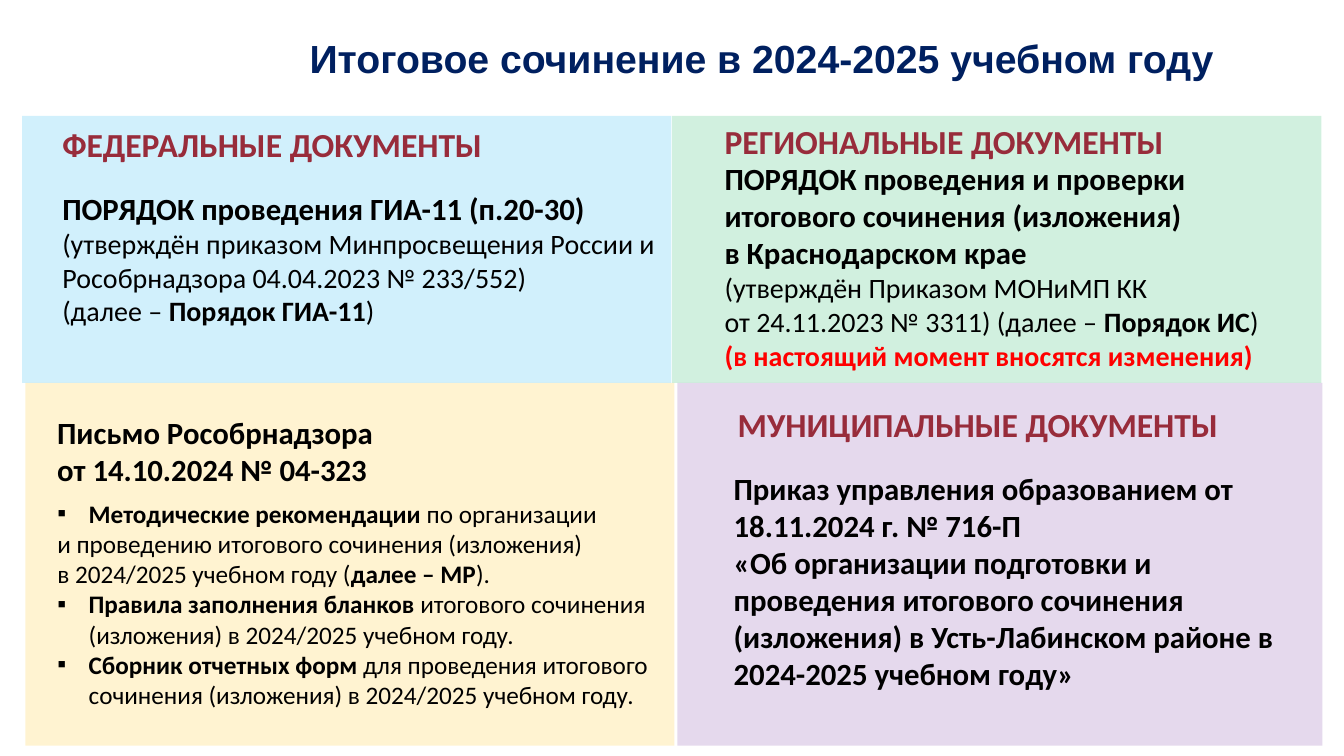
from lxml import etree
from pptx import Presentation
from pptx import util as u
from pptx.dml.color import RGBColor
from pptx.enum import shapes, text
from pptx.oxml.ns import qn

BLACK, WINE, RED, NAVY = "000000", "982C3B", "FF0000", "002060"


def paint(item, color):
    item.rgb = RGBColor.from_string(color)


class Deck:
    face = "Calibri"

    def __init__(self):
        self.show = Presentation()
        self.show.slide_width = u.Cm(33.87)
        self.show.slide_height = u.Cm(19.05)
        self.slide = self.show.slides.add_slide(self.show.slide_layouts[1])
        self.head, self.body = self.slide.placeholders

    def place(self, shape, box):
        shape.left, shape.top, shape.width, shape.height = map(u.Cm, box)
        shape.text_frame.auto_size = text.MSO_AUTO_SIZE.NONE
        return shape.text_frame

    def panel(self, box, color):
        shape = self.slide.shapes.add_shape(
            shapes.MSO_SHAPE.RECTANGLE, *map(u.Cm, box))
        shape.shadow.inherit = False
        shape.fill.solid()
        paint(shape.fill.fore_color, color)
        shade = shape.element.spPr.find(".//" + qn("a:srgbClr"))
        etree.SubElement(shade, qn("a:alpha")).set("val", "18000")
        shape.line.fill.background()
        self.head.element.addprevious(shape.element)

    def phrase(self, par, words, size, color=BLACK, face=face):
        par.space_before = u.Pt(0)
        par.font.name = face
        par.font.size = u.Pt(size)
        paint(par.font.color, color)
        parts = words.split("*")
        if len(parts) == 3 and not parts[0] and not parts[2]:
            par.font.bold = True
            par.add_run().text = parts[1]
            return
        for num, part in enumerate(parts):
            if part:
                run = par.add_run()
                run.text = part
                run.font.bold = num % 2 == 1

    def title(self, box, words):
        par = self.place(self.head, box).paragraphs[0]
        par.alignment = text.PP_ALIGN.CENTER
        par.line_spacing = 0.9
        self.phrase(par, words, 28, NAVY, "Arial")

    def note(self, box, *lines):
        frame = self.slide.shapes.add_textbox(*map(u.Cm, box)).text_frame
        frame.word_wrap = True
        for num, line in enumerate(lines):
            par = frame.add_paragraph() if num else frame.paragraphs[0]
            self.phrase(par, *line)

    def list(self, box, size, *items):
        frame = self.place(self.body, box)
        for num, (mark, words) in enumerate(items):
            par = frame.add_paragraph() if num else frame.paragraphs[0]
            props = par._p.get_or_add_pPr()
            step = u.Cm(0.79) if mark else 0
            props.set("marL", str(step))
            props.set("indent", str(-step))
            if mark:
                etree.SubElement(props, qn("a:buChar")).set("char", mark)
            else:
                etree.SubElement(props, qn("a:buNone"))
            self.phrase(par, words, size)


def main():
    deck = Deck()
    deck.panel((0.56, 2.92, 16.36, 6.73), "00B0F0")
    deck.panel((16.94, 2.92, 16.36, 6.73), "00B050")
    deck.panel((0.64, 9.65, 16.36, 9.14), "FFC000")
    deck.panel((17.07, 9.65, 16.26, 9.14), "7030A0")

    deck.title((5.36, 0.71, 27.66, 1.65),
               "*Итоговое сочинение в 2024-2025 учебном году*")

    for left, top, words in (
            (1.32, 3, "*ФЕДЕРАЛЬНЫЕ ДОКУМЕНТЫ*"),
            (18.01, 2.92, "*РЕГИОНАЛЬНЫЕ ДОКУМЕНТЫ*"),
            (18.34, 10.06, "*МУНИЦИПАЛЬНЫЕ ДОКУМЕНТЫ*")):
        deck.note((left, top, 14, 1.27), (words, 24, WINE))

    deck.note(
        (1.32, 4.65, 15.75, 3.76),
        ("*ПОРЯДОК проведения ГИА-11 (п.20-30)*", 22),
        ("(утверждён приказом Минпросвещения России и "
         "Рособрнадзора 04.04.2023 № 233/552)", 20),
        ("(далее – *Порядок ГИА-11*)", 20))
    deck.note(
        (18.01, 3.91, 15.21, 5.64),
        ("*ПОРЯДОК проведения и проверки итогового сочинения (изложения)*", 22),
        ("*в Краснодарском крае*", 22),
        ("(утверждён Приказом МОНиМП КК", 20),
        ("от 24.11.2023 № 3311) (далее – *Порядок ИС*)", 20),
        ("*(в настоящий момент вносятся изменения)*", 20, RED))
    deck.note(
        (1.19, 10.29, 13.31, 2.13),
        ("*Письмо Рособрнадзора*", 22),
        ("*от 14.10.2024 № 04-323*", 22))
    deck.list(
        (1.19, 12.42, 15.75, 5.64), 18,
        ("▪", "*Методические рекомендации *по организации"),
        ("", "и проведению итогового сочинения (изложения)"),
        ("", "в 2024/2025 учебном году (*далее – МР*)."),
        ("▪", "*Правила заполнения бланков *итогового сочинения "
              "(изложения) в 2024/2025 учебном году."),
        ("▪", "*Сборник отчетных форм *для проведения итогового "
              "сочинения (изложения) в 2024/2025 учебном году."))
    deck.note(
        (18.24, 11.71, 15.21, 5.89),
        ("*Приказ управления образованием от 18.11.2024 г. № 716-П*", 22),
        ("*«Об организации подготовки и проведения итогового сочинения "
         "(изложения) в Усть-Лабинском районе в 2024-2025 учебном году»*", 22))

    deck.show.save("out.pptx")


if __name__ == "__main__":
    main()
